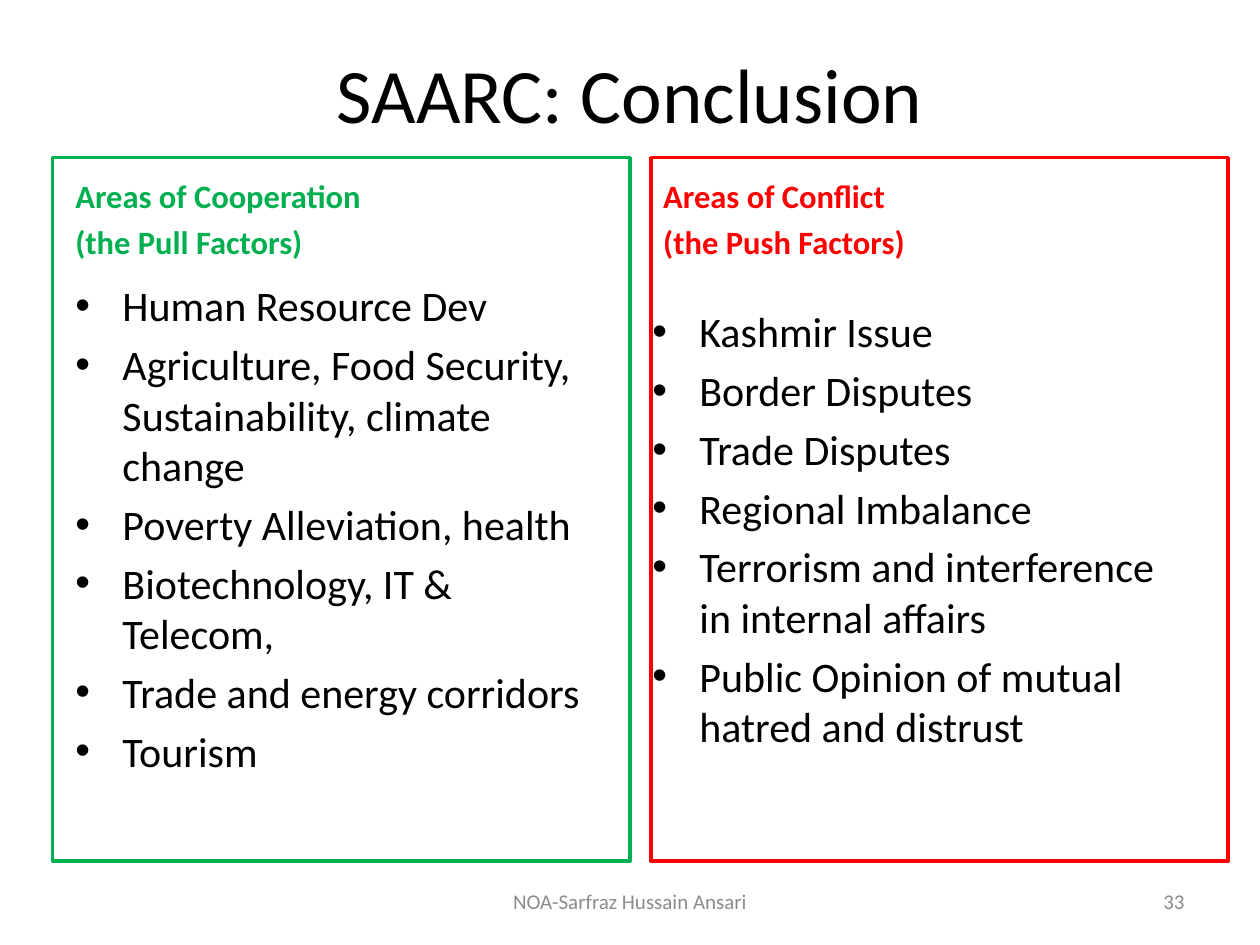
from lxml import etree
from pptx import Presentation
from pptx.dml.color import RGBColor
from pptx.enum.shapes import MSO_SHAPE
from pptx.enum.text import MSO_ANCHOR, PP_ALIGN
from pptx.oxml.ns import qn
from pptx.util import Cm, Pt

LEFT, MID, RIGHT = PP_ALIGN.LEFT, PP_ALIGN.CENTER, PP_ALIGN.RIGHT
TOP, CENTER, BOTTOM = MSO_ANCHOR.TOP, MSO_ANCHOR.MIDDLE, MSO_ANCHOR.BOTTOM
RECT = MSO_SHAPE.RECTANGLE

BLACK = RGBColor(0x00, 0x00, 0x00)
GREEN = RGBColor(0x00, 0xB0, 0x50)
RED = RGBColor(0xFF, 0x00, 0x00)
GRAY = RGBColor(0x8C, 0x8C, 0x8C)
FONT = "Calibri"

TITLE = "SAARC: Conclusion"
# Boxes are left, top, width, height in cm.
SIDES = [
    {
        "color": GREEN,
        "head": ["Areas of Cooperation", "(the Pull Factors)"],
        "items": [
            "Human Resource Dev",
            "Agriculture, Food Security, Sustainability, climate change",
            "Poverty Alleviation, health",
            "Biotechnology, IT & Telecom,",
            "Trade and energy corridors",
            "Tourism",
        ],
        "frame_x": 1.06,
        "head_x": 1.27,
        "list_box": (1.27, 5.52, 11.22, 11.4),
    },
    {
        "color": RED,
        "head": ["Areas of Conflict", "(the Push Factors)"],
        "items": [
            "Kashmir Issue",
            "Border Disputes",
            "Trade Disputes",
            "Regional Imbalance",
            "Terrorism and interference in internal affairs",
            "Public Opinion of mutual hatred and distrust",
        ],
        "frame_x": 13.12,
        "head_x": 13.12,
        "list_box": (12.9, 6.04, 11.22, 10.97),
    },
]
FOOTER = [
    ("NOA-Sarfraz Hussain Ansari", (8.68, 17.65, 8.04, 1.02), MID),
    ("33", (18.2, 17.65, 5.93, 1.02), RIGHT),
]


def fill_text(shape, lines, size, color, bold=False, align=LEFT,
              anchor=TOP, gap=0):
    frame = shape.text_frame
    frame.word_wrap = True
    frame.vertical_anchor = anchor
    frame.text = "\n".join(lines)
    for para in frame.paragraphs:
        para.alignment = align
        para.space_before = Pt(gap)
        font = para.runs[0].font
        font.name, font.size, font.bold = FONT, Pt(size), bold
        font.color.rgb = color


def add_text(slide, box, lines, size, color, **style):
    shape = slide.shapes.add_textbox(*map(Cm, box))
    fill_text(shape, lines, size, color, **style)
    return shape


def add_bullets(shape):
    for para in shape.text_frame.paragraphs:
        props = para._p.get_or_add_pPr()
        props.set("marL", str(Cm(0.95)))
        props.set("indent", str(-Cm(0.95)))
        etree.SubElement(props, qn("a:buFont")).set("typeface", "Arial")
        etree.SubElement(props, qn("a:buChar")).set("char", "•")


def add_frame(slide, x, color):
    frame = slide.shapes.add_shape(RECT, Cm(x), Cm(3.18), Cm(11.64), Cm(14.18))
    frame.shadow.inherit = False
    frame.fill.background()
    frame.line.color.rgb = color
    frame.line.width = Pt(2)


def main():
    deck = Presentation()
    deck.slide_width, deck.slide_height = Cm(25.4), Cm(19.05)
    slide = deck.slides.add_slide(deck.slide_layouts[5])

    title = slide.shapes.title
    title.left, title.top = Cm(1.27), Cm(0.76)
    title.width, title.height = Cm(22.86), Cm(2.21)
    fill_text(title, [TITLE], 44, BLACK, align=MID, anchor=CENTER)

    for side in SIDES:
        add_text(slide, (side["head_x"], 3.6, 11.22, 1.78), side["head"],
                 18.6, side["color"], bold=True, anchor=BOTTOM, gap=3.5)
        points = add_text(slide, side["list_box"], side["items"],
                          24, BLACK, gap=4.8)
        add_bullets(points)
    for text, box, align in FOOTER:
        add_text(slide, box, [text], 12, GRAY, align=align, anchor=CENTER)
    for side in SIDES:
        add_frame(slide, side["frame_x"], side["color"])

    deck.save("out.pptx")


if __name__ == "__main__":
    main()
